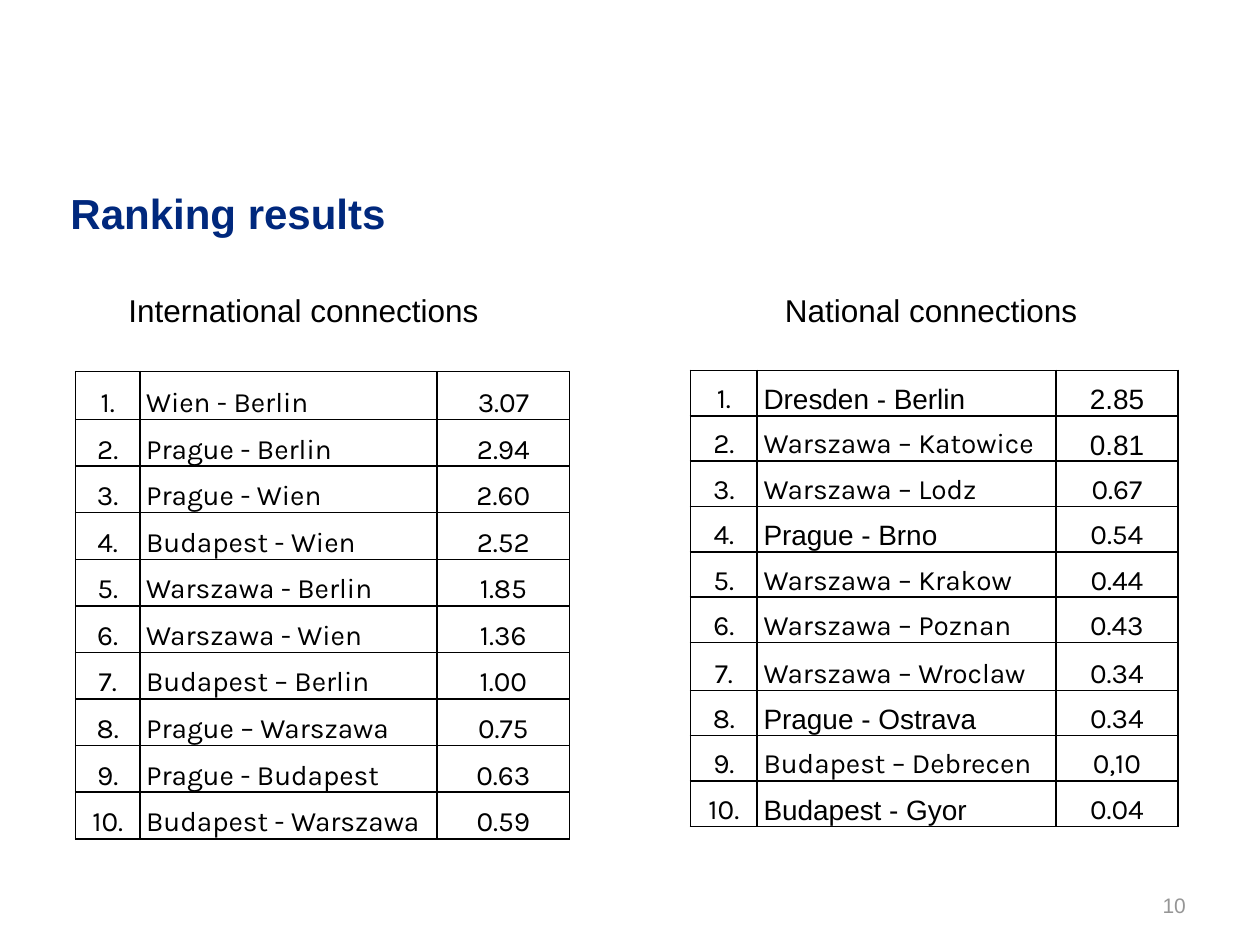
from lxml.etree import SubElement
from pptx import Presentation
from pptx.dml.color import RGBColor
from pptx.enum.text import MSO_ANCHOR, PP_ALIGN
from pptx.oxml.ns import qn
from pptx.util import Inches, Pt

COLORS = {"title": "00287D", "text": "000000", "number": "969696", "border": "000000"}
TITLE = {"name": "Arial", "size": Pt(24), "bold": True}
HEADING = {"name": "Arial", "size": Pt(18)}
NUMBER = {"name": "Arial", "size": Pt(12)}
CELL = {"name": "Karla", "size": Pt(16)}
CELL_MARGINS = {
    "margin_left": Inches(0.05),
    "margin_right": Inches(0.05),
    "margin_top": 0,
    "margin_bottom": 0,
    "vertical_anchor": MSO_ANCHOR.BOTTOM,
}
COLUMN_ALIGNMENTS = (PP_ALIGN.CENTER, PP_ALIGN.LEFT, PP_ALIGN.CENTER)

INTERNATIONAL = [
    ("Wien - Berlin", "3.07"),
    ("Prague - Berlin", "2.94"),
    ("Prague - Wien", "2.60"),
    ("Budapest - Wien", "2.52"),
    ("Warszawa - Berlin", "1.85"),
    ("Warszawa - Wien", "1.36"),
    ("Budapest – Berlin", "1.00"),
    ("Prague – Warszawa", "0.75"),
    ("Prague - Budapest", "0.63"),
    ("Budapest - Warszawa", "0.59"),
]
NATIONAL = [
    ("Dresden - Berlin", "2.85"),
    ("Warszawa – Katowice", "0.81"),
    ("Warszawa – Lodz", "0.67"),
    ("Prague - Brno", "0.54"),
    ("Warszawa – Krakow", "0.44"),
    ("Warszawa – Poznan", "0.43"),
    ("Warszawa – Wroclaw", "0.34"),
    ("Prague - Ostrava", "0.34"),
    ("Budapest – Debrecen", "0,10"),
    ("Budapest - Gyor", "0.04"),
]
ARIAL_TEXTS = {
    "Dresden - Berlin", "2.85", "0.81", "Prague - Brno", "Prague - Ostrava", "Budapest - Gyor",
}


def set_attributes(target, values):
    for name, value in values.items():
        setattr(target, name, value)


def write_text(paragraph, text, font_format, color, alignment=PP_ALIGN.LEFT):
    paragraph.alignment = alignment
    run = paragraph.add_run()
    run.text = text
    set_attributes(run.font, font_format)
    run.font.color.rgb = RGBColor.from_string(COLORS[color])


def add_text(slide, box, text, font_format, color, frame_format, alignment=PP_ALIGN.LEFT):
    frame = slide.shapes.add_textbox(*map(Inches, box)).text_frame
    set_attributes(frame, {"word_wrap": True, **frame_format})
    write_text(frame.paragraphs[0], text, font_format, color, alignment)
    return frame.paragraphs[0]


def add_tab_stop(paragraph, position):
    tab_list = SubElement(paragraph._p.get_or_add_pPr(), qn("a:tabLst"))
    SubElement(tab_list, qn("a:tab"), pos=str(Inches(position)), algn="l")


def add_borders(cell):
    properties = cell._tc.get_or_add_tcPr()
    for side in ("lnL", "lnR", "lnT", "lnB"):
        line = SubElement(properties, qn(f"a:{side}"), w=str(Pt(1)))
        fill = SubElement(line, qn("a:solidFill"))
        SubElement(fill, qn("a:srgbClr"), val=COLORS["border"])


def format_cell(cell, text, alignment):
    set_attributes(cell, CELL_MARGINS)
    add_borders(cell)
    cell.fill.background()
    paragraph = cell.text_frame.paragraphs[0]
    paragraph.line_spacing = 1.15
    font_name = "Arial" if text in ARIAL_TEXTS else "Karla"
    write_text(paragraph, text, {**CELL, "name": font_name}, "text", alignment)


def add_ranking(slide, box, column_widths, row_heights, connections):
    """Add a table of numbered connections with their scores."""
    table = slide.shapes.add_table(len(connections), 3, *map(Inches, box)).table
    set_attributes(table, {"first_row": False, "horz_banding": False})
    for column, width in zip(table.columns, column_widths):
        column.width = Inches(width)
    for row, height in zip(table.rows, row_heights):
        row.height = Inches(height)
    for rank, (row, connection) in enumerate(zip(table.rows, connections), start=1):
        texts = (f"{rank}.", *connection)
        for cell, text, alignment in zip(row.cells, texts, COLUMN_ALIGNMENTS):
            format_cell(cell, text, alignment)


def main():
    presentation = Presentation()
    presentation.slide_width, presentation.slide_height = Inches(10), Inches(7.5)
    slide = presentation.slides.add_slide(presentation.slide_layouts[6])

    bottom = {"vertical_anchor": MSO_ANCHOR.BOTTOM}
    add_text(slide, (7.5, 6.83, 2.01, 0.5), "10", NUMBER, "number", bottom, PP_ALIGN.RIGHT)
    headings = add_text(
        slide, (0.56, 2.21, 8.84, 4.5), "International connections\tNational connections",
        HEADING, "text",
        {"margin_left": Inches(0.46), "margin_top": Inches(0.1), "margin_right": 0, "margin_bottom": 0},
    )
    add_tab_stop(headings, 5.21)
    add_ranking(slide, (0.6, 2.95, 3.92, 3.71), (0.51, 2.36, 1.05),
                [0.38] + [0.37] * 9, INTERNATIONAL)
    add_ranking(slide, (5.48, 2.94, 3.87, 3.67), (0.53, 2.37, 0.97),
                [0.36] * 6 + [0.38] + [0.36] * 3, NATIONAL)
    add_text(slide, (0.56, 1.23, 8.84, 0.71), "Ranking results", TITLE, "title",
             {"margin_left": 0, "margin_right": 0, **bottom})

    presentation.save("out.pptx")


if __name__ == "__main__":
    main()
